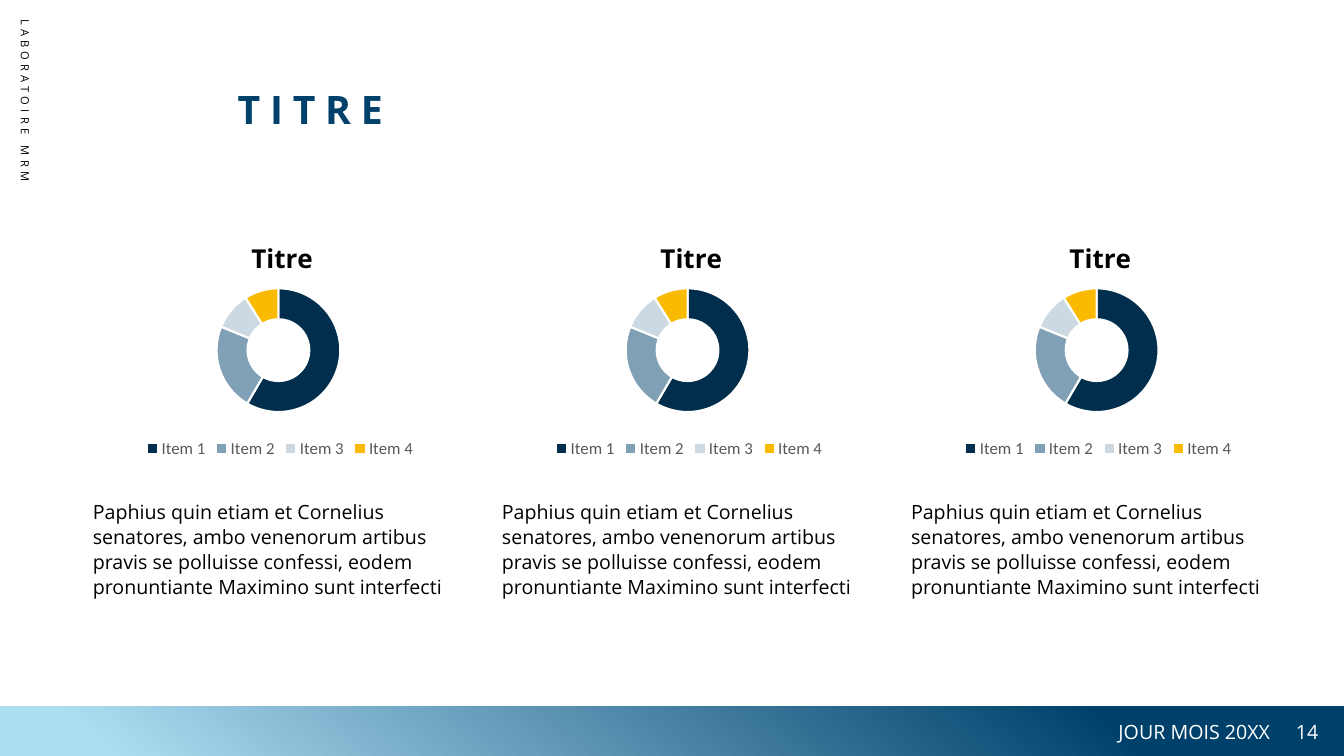
from lxml import etree
from pptx import Presentation
from pptx.chart.data import CategoryChartData
from pptx.dml.color import RGBColor
from pptx.enum.chart import XL_CHART_TYPE, XL_LEGEND_POSITION
from pptx.enum.shapes import MSO_SHAPE
from pptx.enum.text import MSO_ANCHOR, PP_ALIGN
from pptx.oxml import parse_xml
from pptx.oxml.ns import nsdecls, qn
from pptx.util import Cm, Pt

DOUGHNUT = XL_CHART_TYPE.DOUGHNUT
BOTTOM = XL_LEGEND_POSITION.BOTTOM
RECTANGLE = MSO_SHAPE.RECTANGLE
TOP, MIDDLE = MSO_ANCHOR.TOP, MSO_ANCHOR.MIDDLE
LEFT, RIGHT = PP_ALIGN.LEFT, PP_ALIGN.RIGHT

BLACK = RGBColor(0x00, 0x00, 0x00)
WHITE = RGBColor(0xFF, 0xFF, 0xFF)
GREY = RGBColor(0x59, 0x59, 0x59)
BLUE = RGBColor(0x00, 0x41, 0x6C)
SKY = RGBColor(0xAD, 0xDD, 0xF1)
NAVY = RGBColor(0x00, 0x2E, 0x4C)
STEEL = RGBColor(0x80, 0xA0, 0xB6)
MIST = RGBColor(0xCC, 0xD9, 0xE2)
GOLD = RGBColor(0xFA, 0xBA, 0x00)

TEXT_FONT, CHART_FONT = "Open Sans", "Calibri"
SLIDE_W, SLIDE_H = 33.87, 19.05
FOOTER_H = 1.25

ITEMS = [("Item 1", 59, NAVY), ("Item 2", 23, STEEL),
         ("Item 3", 10, MIST), ("Item 4", 9, GOLD)]
COLUMNS = [("Titre", ITEMS, "Paphius quin etiam et Cornelius senatores, ambo "
            "venenorum artibus pravis se polluisse confessi, eodem "
            "pronuntiante Maximino sunt interfecti")] * 3


def format_font(font, color, **values):
    for key, value in values.items():
        setattr(font, key, value)
    font.color.rgb = color


def add_text(slide, box, text, size, color, spacing=0, bold=False, inset=True,
             anchor=MIDDLE, align=LEFT, line_spacing=1.0):
    label = slide.shapes.add_textbox(*map(Cm, box))
    frame = label.text_frame
    frame.word_wrap = True
    frame.vertical_anchor = anchor
    if not inset:
        for side in ("left", "top", "right", "bottom"):
            setattr(frame, f"margin_{side}", 0)
    paragraph = frame.paragraphs[0]
    paragraph.alignment = align
    paragraph.line_spacing = line_spacing
    run = paragraph.add_run()
    run.text = text
    format_font(run.font, color, name=TEXT_FONT, size=Pt(size), bold=bold)
    if spacing:
        run.font._element.set("spc", str(spacing * 100))
    return label


def add_manual_layout(parent, position, **values):
    layout = parse_xml(f"<c:layout {nsdecls('c')}><c:manualLayout/></c:layout>")
    for key, value in values.items():
        etree.SubElement(layout[0], qn(f"c:{key}")).set("val", str(value))
    for existing in parent.findall(qn("c:layout")):
        parent.remove(existing)
    parent.insert(position, layout)


def add_doughnut(slide, box, title, items):
    data = CategoryChartData()
    data.categories = [name for name, _, _ in items]
    data.add_series("Series 1", [value for _, value, _ in items])
    chart = slide.shapes.add_chart(DOUGHNUT, *map(Cm, box), data).chart
    format_font(chart.font, BLACK, name=CHART_FONT, size=Pt(10))

    chart.has_title = True
    heading = chart.chart_title.text_frame.paragraphs[0].add_run()
    heading.text = title
    format_font(heading.font, BLACK, name=TEXT_FONT, size=Pt(18.6), bold=True)
    add_manual_layout(chart.chart_title._element, 1,
                      xMode="edge", yMode="edge", x=0.41, y=0.08)

    chart.has_legend = True
    chart.legend.position = BOTTOM
    chart.legend.include_in_layout = False
    format_font(chart.legend.font, GREY, name=CHART_FONT, size=Pt(12))

    plot = chart.plots[0]
    plot.vary_by_categories = True
    plot._element.find(qn("c:holeSize")).set("val", "75")
    add_manual_layout(plot._element.getparent(), 0, layoutTarget="inner",
                      xMode="edge", yMode="edge", x=0.33, y=0.3, w=0.33, h=0.5)
    for index, (_, _, color) in enumerate(items):
        slice_format = plot.series[0].points[index].format
        slice_format.fill.solid()
        slice_format.fill.fore_color.rgb = color
        slice_format.line.color.rgb = WHITE
        slice_format.line.width = Pt(1.5)


def add_column(slide, box, title, items, body):
    left, top, width, height = box
    add_doughnut(slide, (left, top, width, 6.3), title, items)
    add_text(slide, (left, top + 7.21, width, height - 7.21), body, 14, BLACK,
             inset=False, anchor=TOP, line_spacing=1.06)


def add_columns(slide, box, columns, gap):
    left, top, width, height = box
    column_w = (width - gap * (len(columns) - 1)) / len(columns)
    for index, column in enumerate(columns):
        column_left = left + index * (column_w + gap)
        add_column(slide, (column_left, top, column_w, height), *column)


def add_footer(slide, box, date, number):
    left, top, width, height = box
    band = slide.shapes.add_shape(RECTANGLE, *map(Cm, box))
    band.shadow.inherit = False
    band.line.fill.background()
    band.fill.gradient()
    band.fill.gradient_angle = 50
    stops = [(0.08, SKY), (0.82, BLUE)]
    for stop, (position, color) in zip(band.fill.gradient_stops, stops):
        stop.position = position
        stop.color.rgb = color
    right = left + width
    add_text(slide, (right - 11.9, top, 10.29, height), date, 14, WHITE, align=RIGHT)
    add_text(slide, (right - 1.46, top, 1.22, height), number, 14, WHITE)


def add_side_label(slide, box, text):
    left, top, width, height = box
    offset = (height - width) / 2
    label = add_text(slide, (left - offset, top + offset, height, width),
                     text, 8, BLACK, spacing=3)
    label.rotation = 90


def main():
    presentation = Presentation()
    presentation.slide_width = Cm(SLIDE_W)
    presentation.slide_height = Cm(SLIDE_H)
    slide = presentation.slides.add_slide(presentation.slide_layouts[6])
    add_footer(slide, (0, SLIDE_H - FOOTER_H, SLIDE_W, FOOTER_H),
               "JOUR MOIS 20XX", "14")
    add_side_label(slide, (0, 0.23, 1.27, 11.43), "LABORATOIRE MRM")
    add_text(slide, (5.99, 1.02, 14.6, 3.43), "TITRE", 28, BLUE,
             spacing=7, bold=True, inset=False)
    add_columns(slide, (2.34, 5.36, 30.07, 11.2), COLUMNS, gap=0.86)
    presentation.save("out.pptx")


if __name__ == "__main__":
    main()
